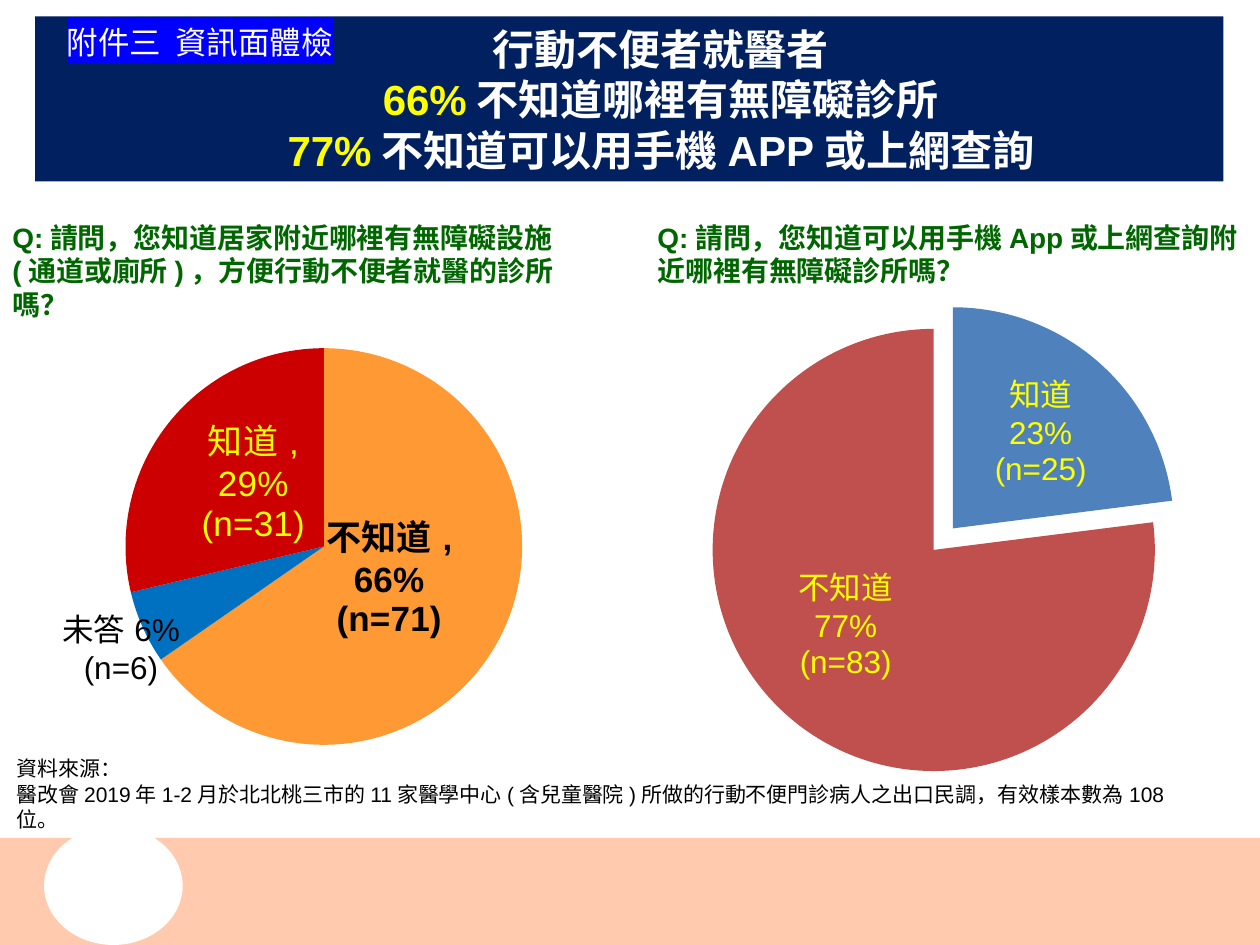
from dataclasses import dataclass

from lxml.etree import SubElement
from pptx import Presentation
from pptx.chart.data import CategoryChartData
from pptx.dml.color import RGBColor
from pptx.enum.chart import XL_CHART_TYPE as ChartType, XL_LABEL_POSITION as LabelPosition
from pptx.enum.shapes import MSO_SHAPE as Shape
from pptx.enum.text import MSO_ANCHOR as Anchor, PP_ALIGN as Align
from pptx.oxml import parse_xml
from pptx.oxml.ns import nsdecls, qn
from pptx.util import Inches, Pt


@dataclass(frozen=True)
class Theme:
    font: str = "Arial"
    white: str = "FFFFFF"
    black: str = "000000"
    yellow: str = "FFFF00"
    navy: str = "002060"
    green: str = "006600"
    tag_blue: str = "0000FF"
    peach: str = "FFCAAD"
    orange: str = "FF9933"
    blue: str = "0070C0"
    red: str = "CC0000"
    soft_blue: str = "4F81BD"
    soft_red: str = "C0504D"
    title: int = 24
    large_label: int = 20
    label: int = 18
    question: int = 16
    source: int = 12


THEME = Theme()


def style_font(font, size, color, bold=False):
    values = {"name": THEME.font, "size": Pt(size), "bold": bold}
    for name, value in values.items():
        setattr(font, name, value)
    font.color.rgb = RGBColor.from_string(color)


def add_run(paragraph, text, size, color, bold=False):
    run = paragraph.add_run()
    run.text = text
    style_font(run.font, size, color, bold)
    return run


def add_solid(slide, preset, box, color):
    shape = slide.shapes.add_shape(preset, *map(Inches, box))
    shape.shadow.inherit = False
    shape.fill.solid()
    shape.fill.fore_color.rgb = RGBColor.from_string(color)
    shape.line.fill.background()
    return shape


def add_text(slide, box, lines, size, color, bold=False):
    """Add a wrapping text box, one paragraph per line, and return its runs."""
    frame = slide.shapes.add_textbox(*map(Inches, box)).text_frame
    frame.word_wrap = True
    runs = []
    for index, line in enumerate(lines):
        paragraph = frame.add_paragraph() if index else frame.paragraphs[0]
        runs.append(add_run(paragraph, line, size, color, bold))
    return runs


def add_footer(slide, box):
    left, top, _, _ = box
    add_solid(slide, Shape.RECTANGLE, box, THEME.peach)
    add_solid(slide, Shape.OVAL, (left + 0.35, top - 0.09, 1.1, 0.94), THEME.white)


def add_banner(slide, box):
    frame = add_solid(slide, Shape.RECTANGLE, box, THEME.navy).text_frame
    frame.word_wrap = True
    frame.vertical_anchor = Anchor.MIDDLE
    headings = [
        ("", "行動不便者就醫者"),
        ("66%", "不知道哪裡有無障礙診所"),
        ("77%", "不知道可以用手機APP或上網查詢"),
    ]
    for index, (share, text) in enumerate(headings):
        paragraph = frame.add_paragraph() if index else frame.paragraphs[0]
        paragraph.alignment = Align.CENTER
        paragraph.level = 1
        properties = paragraph._p.get_or_add_pPr()
        properties.set("marL", str(Inches(0.5)))
        properties.set("indent", "0")
        if share:
            add_run(paragraph, share, THEME.title, THEME.yellow, True)
        add_run(paragraph, text, THEME.title, THEME.white, True)


def add_tag(slide, box):
    run, = add_text(slide, box, ["附件三  資訊面體檢"], THEME.label, THEME.white)
    fill = run._r.rPr.find(qn("a:solidFill"))
    fill.addnext(parse_xml(
        f'<a:highlight {nsdecls("a")}><a:srgbClr val="{THEME.tag_blue}"/></a:highlight>'))


def manual_layout(**values):
    """Build a chart layout element from fractions of the chart's size."""
    layout = parse_xml(f'<c:layout {nsdecls("c")}><c:manualLayout/></c:layout>')
    for name, value in values.items():
        SubElement(layout[0], qn(f"c:{name}")).set("val", str(value))
    return layout


def explosion(percent):
    return parse_xml(f'<c:explosion {nsdecls("c")} val="{percent}"/>')


def add_pie(slide, box, slices, plot_box, explode=0):
    """Add a pie; each slice is (name, value, color, label, label shift, font values)."""
    data = CategoryChartData()
    data.categories = [item[0] for item in slices]
    data.add_series("Series 1", [item[1] for item in slices])
    chart = slide.shapes.add_chart(ChartType.PIE, *map(Inches, box), data).chart
    for name in ("has_title", "has_legend"):
        setattr(chart, name, False)
    style_font(chart.font, THEME.label, THEME.black)

    plot = chart.plots[0]
    plot.vary_by_categories = True
    area = chart._chartSpace.chart.plotArea
    for old in area.findall(qn("c:layout")):
        area.remove(old)
    area.insert(0, manual_layout(layoutTarget="inner", xMode="edge", yMode="edge",
                                 **dict(zip("xywh", plot_box))))

    series = plot.series[0]
    for index, (_, _, color, text, shift, font) in enumerate(slices):
        point = series.points[index]
        point.format.fill.solid()
        point.format.fill.fore_color.rgb = RGBColor.from_string(color)
        point.format.line.fill.background()
        label = point.data_label
        label.text_frame.text = text
        for paragraph in label.text_frame.paragraphs:
            for run in paragraph.runs:
                style_font(run.font, *font)
        label.position = LabelPosition.CENTER
        element = series._element.find(qn("c:dLbls")).findall(qn("c:dLbl"))[index]
        element.find(qn("c:idx")).addnext(manual_layout(**dict(zip("xy", shift))))

    if explode:
        first = series._element.find(qn("c:dPt"))
        first.addprevious(explosion(explode))
        first.find(qn("c:spPr")).addprevious(explosion(0))


def add_facilities_panel(slide, box):
    left, top, width, height = box
    add_text(slide, (left, top, width, 0.64),
             ["Q:請問，您知道居家附近哪裡有無障礙設施(通道或廁所)，方便行動不便者就醫的診所嗎？"],
             THEME.question, THEME.green, True)
    slices = [
        ("不知道", 66, THEME.orange, "不知道,\n66%\n(n=71)", (-0.03, -0.03),
         (THEME.large_label, THEME.black, True)),
        ("未答", 6, THEME.blue, "未答6%\n(n=6)", (-0.15, 0.1),
         (THEME.label, THEME.black)),
        ("知道", 29, THEME.red, "知道,\n29%\n(n=31)", (0.01, -0.01),
         (THEME.large_label, THEME.yellow)),
    ]
    add_pie(slide, (left - 0.37, top + 0.21, 5.94, height - 0.21), slices,
            (0.23, 0.18, 0.53, 0.68))


def add_search_panel(slide, box):
    left, top, width, height = box
    font = (THEME.label, THEME.yellow)
    slices = [
        ("知道", 23, THEME.soft_blue, "知道\n23%\n(n=25)", (0.02, -0.03), font),
        ("不知道", 77, THEME.soft_red, "不知道\n77%\n(n=83)", (-0.02, -0.02), font),
    ]
    add_pie(slide, (left - 0.37, top + 0.37, 5.92, height - 0.37), slices,
            (0.14, 0.03, 0.67, 0.88), explode=13)
    add_text(slide, (left, top, width, 0.64),
             ["Q:請問，您知道可以用手機App或上網查詢附近哪裡有無障礙診所嗎？"],
             THEME.question, THEME.green, True)


def main():
    presentation = Presentation()
    presentation.slide_width, presentation.slide_height = Inches(10), Inches(7.5)
    slide = presentation.slides.add_slide(presentation.slide_layouts[6])
    add_footer(slide, (0, 6.65, 10, 0.85))
    add_facilities_panel(slide, (0, 1.7, 4.62, 4.88))
    add_search_panel(slide, (5.12, 1.7, 4.86, 4.89))
    add_text(slide, (0.03, 5.95, 9.43, 0.5),
             ["資料來源：",
              "醫改會2019年1-2月於北北桃三市的11家醫學中心(含兒童醫院)所做的"
              "行動不便門診病人之出口民調，有效樣本數為108位。"],
             THEME.source, THEME.black)
    add_banner(slide, (0.28, 0.13, 9.43, 1.31))
    add_tag(slide, (0.43, 0.13, 2.44, 0.4))
    presentation.save("out.pptx")


if __name__ == "__main__":
    main()
